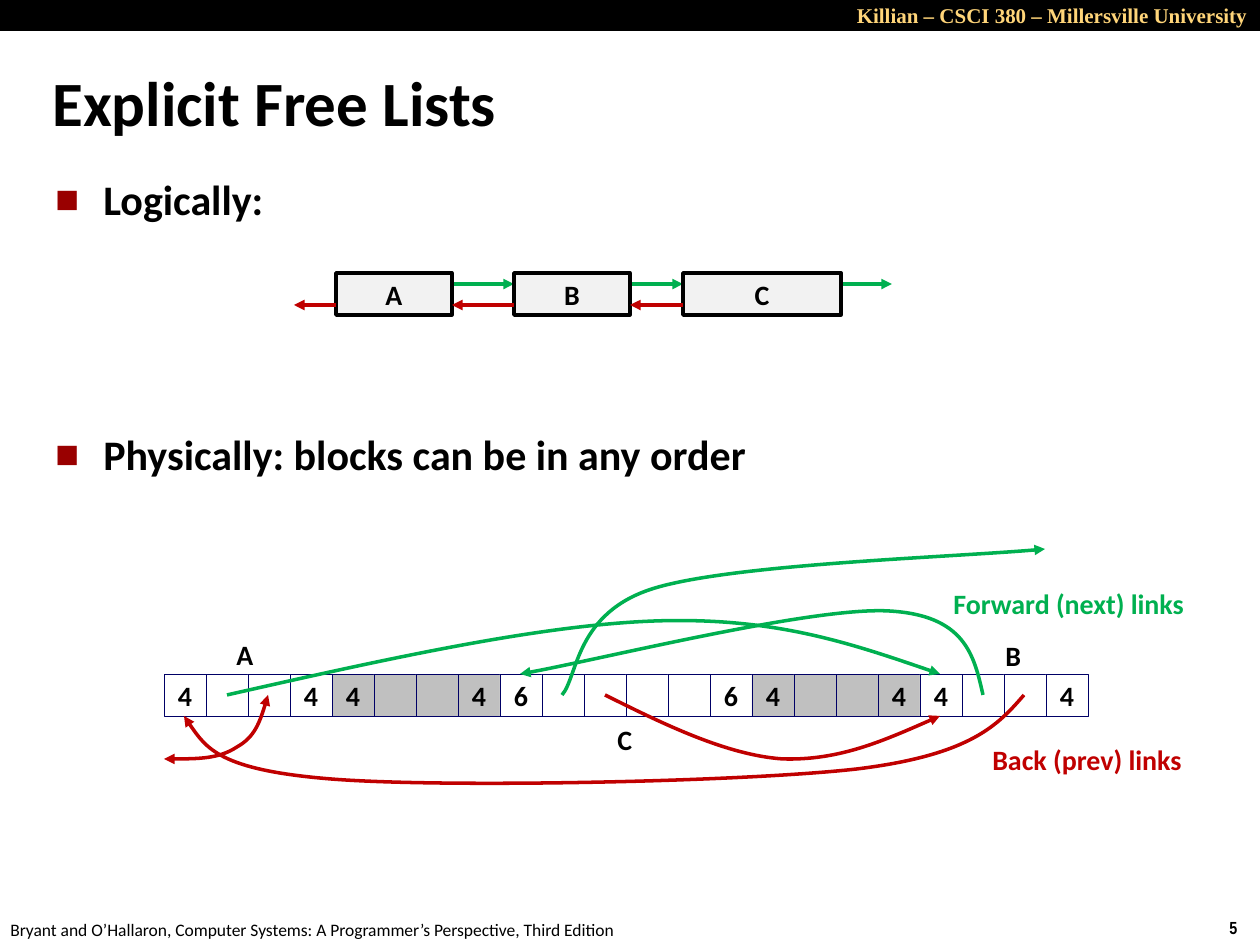
from typing import NamedTuple

from lxml.etree import SubElement
from pptx import Presentation
from pptx.dml.color import RGBColor
from pptx.enum.shapes import MSO_CONNECTOR, MSO_SHAPE
from pptx.enum.text import MSO_ANCHOR, PP_ALIGN
from pptx.oxml.ns import qn
from pptx.util import Emu, Pt

EMU_PER_PX = 914400 / 126
BLACK, WHITE, GREY = "000000", "FFFFFF", "C0C0C0"
NEXT_GREEN, PREV_RED = "00B050", "C00000"
LINK_WIDTH = 2


class Node(NamedTuple):
    name: str
    left: int
    width: int


class Block(NamedTuple):
    words: int
    fill: str


class Link(NamedTuple):
    """A start point followed by cubic curve points, three to a curve."""
    color: str
    points: list[tuple[int, int]]
    both_ends: bool = False


class Label(NamedTuple):
    text: str
    left: int
    top: int
    width: int
    color: str = BLACK


NODES = [Node("A", 336, 116), Node("B", 514, 116), Node("C", 683, 158)]
NODE_TOP, NODE_HEIGHT = 273, 42
NEXT_Y, PREV_Y = 284, 305
LIST_START, LIST_END = 294, 892

HEAP = [Block(4, WHITE), Block(4, GREY), Block(6, WHITE), Block(4, GREY), Block(4, WHITE)]
HEAP_LEFT, HEAP_TOP, WORD = 164, 674, 42

LINKS = [
    Link(NEXT_GREEN, [(227, 695), (382, 660), (538, 625), (656, 621),
                      (776, 617), (858, 646), (940, 674)]),
    Link(NEXT_GREEN, [(983, 695), (974, 655), (965, 615), (888, 611),
                      (811, 607), (582, 664), (520, 674)]),
    Link(PREV_RED, [(1024, 695), (998, 725), (971, 755), (857, 769), (741, 782),
                    (444, 788), (331, 779), (219, 770), (202, 743), (184, 716)]),
    Link(PREV_RED, [(605, 695), (665, 725), (727, 755), (782, 759),
                    (839, 761), (890, 738), (940, 716)]),
    Link(NEXT_GREEN, [(562, 695), (578, 677), (575, 612), (655, 588),
                      (735, 564), (963, 557), (1045, 549)]),
    Link(PREV_RED, [(268, 695), (262, 716), (255, 737), (237, 747),
                    (219, 759), (192, 759), (164, 759)], both_ends=True),
]

LABELS = [
    Label("Forward (next) links", 941, 580, 258, NEXT_GREEN),
    Label("Back (prev) links", 980, 736, 217, PREV_RED),
    Label("A", 224, 631, 43),
    Label("B", 993, 632, 40),
    Label("C", 605, 716, 40),
]


def px(length: int) -> Emu:
    return Emu(round(length * EMU_PER_PX))


def rgb(color: str) -> RGBColor:
    return RGBColor.from_string(color)


def write_text(shape, text: str, *, size: float = 16, color: str = BLACK, bold: bool = True,
               font: str = "Calibri", align=PP_ALIGN.LEFT, anchor=MSO_ANCHOR.TOP,
               wrap: bool = False, spacing: float = 1.0, before: tuple = ()):
    """Fill the shape with one paragraph a line; before holds the space above each."""
    frame = shape.text_frame
    frame.word_wrap = wrap
    frame.vertical_anchor = anchor
    frame.text = text
    for paragraph in frame.paragraphs:
        paragraph.alignment = align
        paragraph.line_spacing = spacing
        style = paragraph.runs[0].font
        style.name, style.size, style.bold = font, Pt(size), bold
        style.color.rgb = rgb(color)
    for paragraph, space in zip(frame.paragraphs, before):
        paragraph.space_before = Pt(space)


def add_text(slide, text: str, left: int, top: int, width: int, height: int, **text_format):
    box = slide.shapes.add_textbox(px(left), px(top), px(width), px(height))
    write_text(box, text, **text_format)
    return box


def add_bullets(box, color: str, percent: int) -> None:
    for paragraph in box.text_frame.paragraphs:
        props = paragraph._p.get_or_add_pPr()
        props.set("marL", str(px(48)))
        props.set("indent", str(-px(48)))
        SubElement(SubElement(props, qn("a:buClr")), qn("a:srgbClr"), val=color)
        SubElement(props, qn("a:buSzPct"), val=str(percent * 1000))
        SubElement(props, qn("a:buFont"), typeface="Calibri")
        SubElement(props, qn("a:buChar"), char="■")


def add_rect(slide, left: int, top: int, width: int, height: int, fill: str,
             line: str = "", line_width: float = 0, text: str = "") -> None:
    rect = slide.shapes.add_shape(MSO_SHAPE.RECTANGLE, px(left), px(top), px(width), px(height))
    rect.shadow.inherit = False
    rect.fill.solid()
    rect.fill.fore_color.rgb = rgb(fill)
    if line:
        rect.line.color.rgb = rgb(line)
        rect.line.width = Pt(line_width)
    else:
        rect.line.fill.background()
    if text:
        write_text(rect, text, align=PP_ALIGN.CENTER, anchor=MSO_ANCHOR.MIDDLE)


def style_link(shape, color: str, both_ends: bool = False) -> None:
    shape.line.color.rgb = rgb(color)
    shape.line.width = Pt(LINK_WIDTH)
    outline = shape._element.spPr.find(qn("a:ln"))
    for end in ("a:headEnd", "a:tailEnd") if both_ends else ("a:tailEnd",):
        SubElement(outline, qn(end), type="triangle")


def add_arrow(slide, start: int, end: int, y: int, color: str) -> None:
    arrow = slide.shapes.add_connector(MSO_CONNECTOR.STRAIGHT, px(start), px(y), px(end), px(y))
    style_link(arrow, color)
    SubElement(arrow._element.spPr, qn("a:effectLst"))


def add_curve(slide, link: Link) -> None:
    start, *others = link.points
    builder = slide.shapes.build_freeform(*start, scale=EMU_PER_PX)
    builder.add_line_segments(others, close=False)
    curve = builder.convert_to_shape()
    segments = curve._element.xpath(".//a:lnTo")
    outline = segments[0].getparent()
    for first in range(0, len(segments), 3):
        bezier = SubElement(outline, qn("a:cubicBezTo"))
        for segment in segments[first:first + 3]:
            bezier.append(segment[0])
            outline.remove(segment)
    curve.shadow.inherit = False
    curve.fill.background()
    style_link(curve, link.color, link.both_ends)


def draw_frame(slide) -> None:
    """Draw the header bar, the footer and the title."""
    add_rect(slide, 0, 0, 1260, 31, BLACK)
    add_text(slide, "Killian – CSCI 380 – Millersville University", 693, -4, 567, 38,
             size=12, color="FFD579", font="Times New Roman", align=PP_ALIGN.RIGHT, wrap=True)
    add_text(slide, "5", 1217, 911, 43, 34, size=10, font="Arial Narrow")
    add_text(slide, "Bryant and O’Hallaron, Computer Systems: A Programmer’s Perspective, Third Edition",
             -2, 913, 640, 34, size=10, bold=False)
    add_text(slide, "Explicit Free Lists", 40, 67, 837, 79,
             size=36, anchor=MSO_ANCHOR.MIDDLE, wrap=True, spacing=0.87)


def draw_logical_list(slide) -> None:
    lefts = [node.left for node in NODES]
    rights = [node.left + node.width for node in NODES]
    for start, end in zip(rights, lefts[1:] + [LIST_END]):
        add_arrow(slide, start, end, NEXT_Y, NEXT_GREEN)
    for node in NODES:
        add_rect(slide, node.left, NODE_TOP, node.width, NODE_HEIGHT,
                 "F2F2F2", BLACK, 2, node.name)
    for start, end in zip(lefts, [LIST_START] + rights):
        add_arrow(slide, start, end, PREV_Y, PREV_RED)


def draw_heap(slide) -> None:
    """Draw each block as a run of words with its size in the first and last."""
    left = HEAP_LEFT
    for block in HEAP:
        for word in range(block.words):
            size = str(block.words) if word in (0, block.words - 1) else ""
            add_rect(slide, left, HEAP_TOP, WORD, WORD, block.fill, "000066", 0.25, size)
            left += WORD


def main() -> None:
    deck = Presentation()
    deck.slide_width, deck.slide_height = px(1260), px(945)
    slide = deck.slides.add_slide(deck.slide_layouts[6])
    draw_frame(slide)
    topics = add_text(slide, "Logically:\nPhysically: blocks can be in any order",
                      43, 175, 1145, 335, size=24, wrap=True, spacing=0.85, before=(4.4, 121.4))
    add_bullets(topics, "990000", 60)
    draw_logical_list(slide)
    draw_heap(slide)
    for link in LINKS:
        add_curve(slide, link)
    for label in LABELS:
        add_text(slide, label.text, label.left, label.top, label.width, 47, color=label.color)
    deck.save("out.pptx")


if __name__ == "__main__":
    main()
